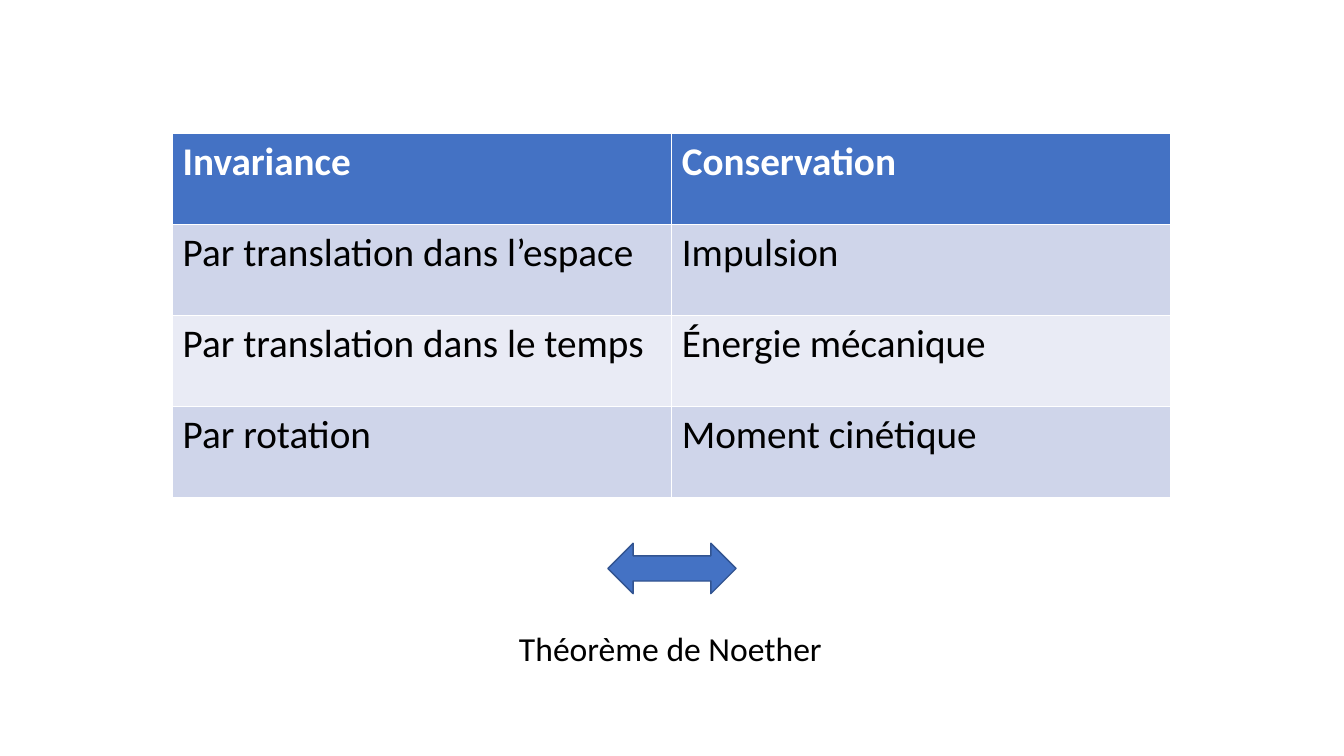
"""Build a slide pairing invariances with conserved quantities."""
from dataclasses import dataclass

from pptx import Presentation
from pptx.dml.color import RGBColor
from pptx.enum import shapes, text
from pptx.util import Cm, Pt


@dataclass(frozen=True)
class Theme:
    """Colours, font and type sizes of the slide."""
    font: str = "Calibri"
    accent: str = "4472C4"
    outline: str = "325491"
    bands: tuple = ("CFD5EA", "E9EBF5")
    ink: str = "000000"
    light: str = "FFFFFF"
    table_size: int = 28
    caption_size: int = 24


def write(frame, wording, *, font, size, color, bold=False, align=text.PP_ALIGN.LEFT):
    """Put formatted wording into a text frame."""
    paragraph = frame.paragraphs[0]
    paragraph.alignment = align
    run = paragraph.add_run()
    run.text = wording
    run.font.name = font
    run.font.size = Pt(size)
    run.font.bold = bold
    run.font.color.rgb = RGBColor.from_string(color)


def paint(fill, color):
    """Give a fill one solid colour."""
    fill.solid()
    fill.fore_color.rgb = RGBColor.from_string(color)


class SlideBuilder:
    """Hold the theme and the current slide, and add elements to it."""

    def __init__(self, slide, theme):
        """Keep the slide and its theme."""
        self.slide = slide
        self.theme = theme

    def table(self, rows, left, top, column_width, row_height):
        """Add a table with a header row and banded body rows."""
        theme = self.theme
        row_count, column_count = len(rows), len(rows[0])
        grid = self.slide.shapes.add_table(
            row_count, column_count, Cm(left), Cm(top),
            Cm(column_width * column_count), Cm(row_height * row_count)).table
        for row_index, wordings in enumerate(rows):
            header = row_index == 0
            band = theme.accent if header else theme.bands[(row_index - 1) % 2]
            for column_index, wording in enumerate(wordings):
                cell = grid.cell(row_index, column_index)
                paint(cell.fill, band)
                write(cell.text_frame, wording, font=theme.font, size=theme.table_size,
                      color=theme.light if header else theme.ink, bold=header)

    def double_arrow(self, left, top, width, height):
        """Add a two-headed block arrow."""
        arrow = self.slide.shapes.add_shape(
            shapes.MSO_SHAPE.LEFT_RIGHT_ARROW, Cm(left), Cm(top), Cm(width), Cm(height))
        arrow.shadow.inherit = False
        paint(arrow.fill, self.theme.accent)
        arrow.line.color.rgb = RGBColor.from_string(self.theme.outline)
        arrow.line.width = Pt(1)

    def caption(self, wording, left, top, width, height):
        """Add a single-line caption."""
        frame = self.slide.shapes.add_textbox(
            Cm(left), Cm(top), Cm(width), Cm(height)).text_frame
        frame.word_wrap = False
        frame.auto_size = text.MSO_AUTO_SIZE.SHAPE_TO_FIT_TEXT
        write(frame, wording, font=self.theme.font, size=self.theme.caption_size,
              color=self.theme.ink)


def main():
    """Create the presentation and save it."""
    deck = Presentation()
    deck.slide_width, deck.slide_height = Cm(33.87), Cm(19.05)
    builder = SlideBuilder(deck.slides.add_slide(deck.slide_layouts[6]), Theme())
    symmetries = [
        ("Invariance", "Conservation"),
        ("Par translation dans l’espace", "Impulsion"),
        ("Par translation dans le temps", "Énergie mécanique"),
        ("Par rotation", "Moment cinétique"),
    ]
    builder.table(symmetries, left=4.35, top=3.35, column_width=12.58, row_height=2.3)
    builder.double_arrow(left=15.32, top=13.69, width=3.23, height=1.27)
    builder.caption("Théorème de Noether", left=12.83, top=15.7, width=8.23, height=1.27)
    deck.save("out.pptx")


if __name__ == "__main__":
    main()
